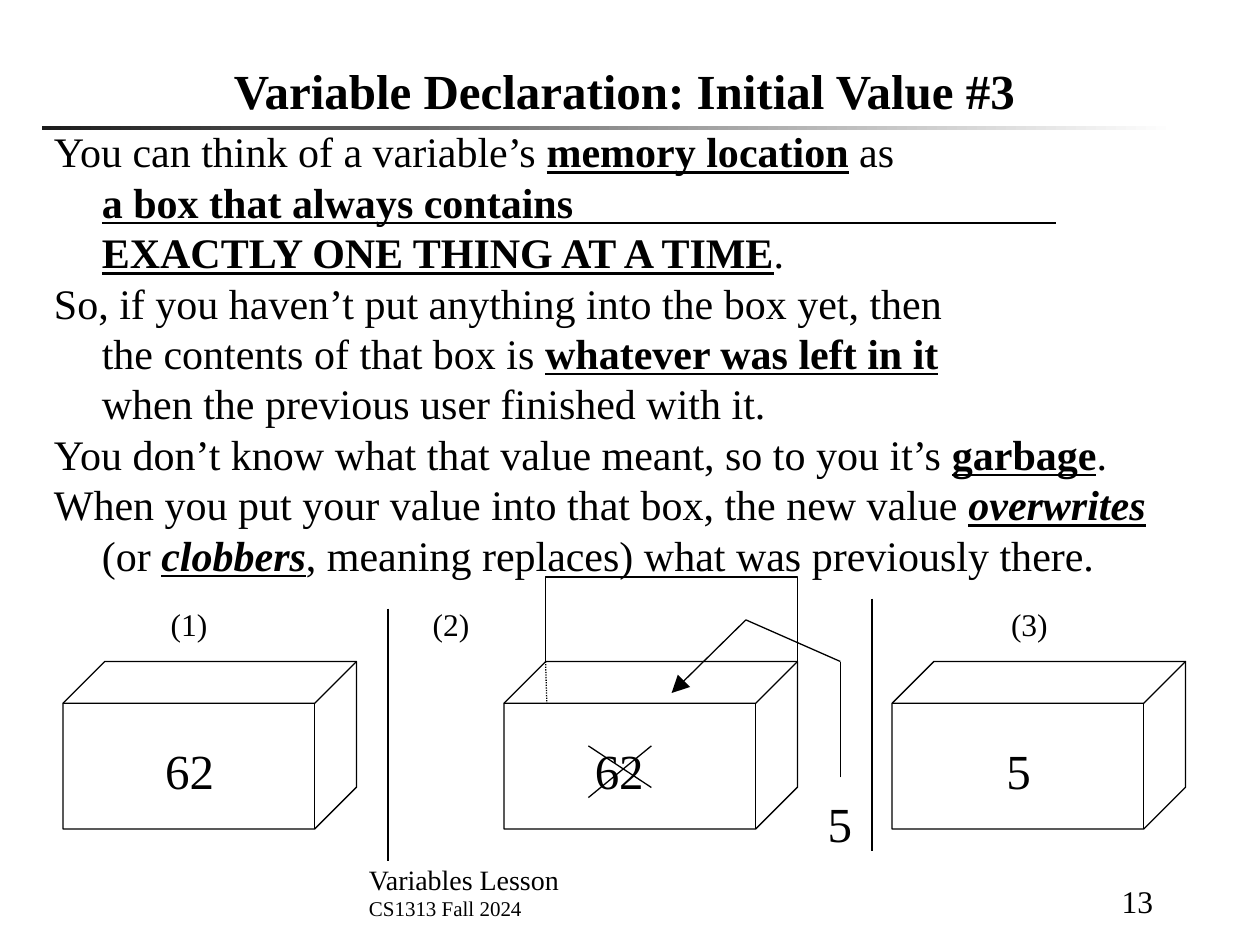
import pptx
import pptx.util
import pptx.dml.color
import pptx.enum.dml
import pptx.enum.shapes
import pptx.enum.text
from lxml import etree

Inches, Pt = pptx.util.Inches, pptx.util.Pt
RGB = pptx.dml.color.RGBColor.from_string
SHAPE = pptx.enum.shapes.MSO_SHAPE
ALIGN = pptx.enum.text.PP_ALIGN
ANCHOR = pptx.enum.text.MSO_ANCHOR
DASH = pptx.enum.dml.MSO_LINE
NS = "{http://schemas.openxmlformats.org/drawingml/2006/main}"


class Theme:
    font = "Times New Roman"
    ink, dark, light = RGB("000000"), RGB("1C1C1C"), RGB("FFFFFF")
    title, body, value, label, foot, small = 28, 24, 28, 18, 16, 12
    line, under = 0.75, 1.25


KEY = {"bold": True, "underline": True}
TERM = {**KEY, "italic": True}


class Page:
    def __init__(self, slide, theme):
        self.slide, self.theme = slide, theme

    def text(self, area, paras, size, align=ALIGN.LEFT, anchor=ANCHOR.TOP, wrap=True):
        """Each paragraph is a list of (text, format) runs; a newline breaks a line."""
        box = self.slide.shapes.add_textbox(*map(Inches, area))
        frame = box.text_frame
        frame.word_wrap, frame.vertical_anchor = wrap, anchor
        for n, runs in enumerate(paras):
            para = frame.paragraphs[0] if n == 0 else frame.add_paragraph()
            para.alignment = align
            for words, extra in runs:
                for k, part in enumerate(words.split("\n")):
                    if k:
                        para.add_line_break()
                    if part:
                        self.run(para, part, {"size": Pt(size), **extra})
        return frame

    def run(self, para, words, style):
        run = para.add_run()
        run.text = words
        for name, value in {"name": self.theme.font, **style}.items():
            setattr(run.font, name, value)
        run.font.color.rgb = self.theme.ink

    def hang(self, frame, indent):
        for para in frame.paragraphs:
            props = para._p.get_or_add_pPr()
            props.set("marL", str(Inches(indent)))
            props.set("indent", str(-Inches(indent)))

    def mark(self, x, y, words, size):
        high = 0.57 if size == self.theme.value else 0.4
        wide = 0.67 if size == self.theme.value else 0.5
        self.text((x, y, wide, high), [[(words, {})]], size, ALIGN.CENTER, wrap=False)

    def shape(self, kind, area):
        shape = self.slide.shapes.add_shape(kind, *map(Inches, area))
        shape.shadow.inherit = False
        shape.fill.background()
        shape.line.color.rgb = self.theme.ink
        shape.line.width = Pt(self.theme.line)
        return shape

    def cube(self, x):
        self.shape(SHAPE.CUBE, (x, 5.25, 2.33, 1.33)).adjustments[0] = 0.25

    def rule(self, area):
        bar = self.shape(SHAPE.RECTANGLE, area)
        bar.line.fill.background()
        bar.fill.gradient()
        bar.fill.gradient_angle = 0
        for stop, color in zip(bar.fill.gradient_stops, (self.theme.dark, self.theme.light)):
            stop.color.rgb = color

    def line(self, start, end, dash=None, arrow=False, width=Theme.line):
        kind = pptx.enum.shapes.MSO_CONNECTOR.STRAIGHT
        line = self.slide.shapes.add_connector(kind, *map(Inches, start + end))
        line.line.color.rgb = self.theme.ink
        line.line.width = Pt(width)
        if dash:
            line.line.dash_style = dash
        if arrow:
            etree.SubElement(line.line._get_or_add_ln(), NS + "tailEnd",
                             type="triangle", w="lg", len="lg")
        etree.SubElement(line._element.spPr, NS + "effectLst")


BODY = [
    [("You can think of a variable’s ", {}), ("memory location", KEY), (" as\n", {}),
     ("a box that always contains\nEXACTLY ONE THING AT A TIME", KEY), (".", {})],
    [("So, if you haven’t put anything into the box yet, then\n"
      "the contents of that box is ", {}), ("whatever was left in it", KEY),
     ("\nwhen the previous user finished with it.", {})],
    [("You don’t know what that value meant, so to you it’s ", {}),
     ("garbage", KEY), (".", {})],
    [("When you put your value into that box, the new value ", {}),
     ("overwrites", TERM), (" (or ", {}), ("clobbers", TERM),
     (", meaning replaces) what was previously there.", {})],
]


def main():
    deck = pptx.Presentation()
    deck.slide_width, deck.slide_height = Inches(10), Inches(7.5)
    theme = Theme()
    page = Page(deck.slides.add_slide(deck.slide_layouts[6]), theme)

    # Rule and footer
    page.rule((0.33, 1, 9, 0.03))
    page.text((7.83, 6.85, 1.42, 0.5), [[("13", {})]], theme.label,
              ALIGN.RIGHT, ANCHOR.BOTTOM)
    page.text((2.83, 6.86, 4.83, 0.5),
              [[("Variables Lesson", {})],
               [("CS1313 Fall 2024", {"size": Pt(theme.small)})]],
              theme.foot, anchor=ANCHOR.BOTTOM)

    # Three boxes with their values and step labels
    for step, (cube, value, label, words) in enumerate(
            [(0.5, 1.17, 1.25, "62"), (4, 4.58, 3.33, "62"), (7.08, 7.75, 7.92, "5")], 1):
        page.cube(cube)
        page.mark(value, 5.83, words, theme.value)
        page.mark(label, 4.75, f"({step})", theme.label)

    # Open lid of the second box
    page.shape(SHAPE.RECTANGLE, (4.33, 4.58, 2, 0.67))
    page.line((4.33, 5.25), (4.34, 5.58), dash=DASH.ROUND_DOT)

    # New value going in
    page.mark(6.33, 6.25, "5", theme.value)
    route = [(6.67, 6.17), (6.67, 5.25), (5.92, 4.92), (5.33, 5.5)]
    for start, end in zip(route, route[1:]):
        page.line(start, end, arrow=end == route[-1])

    # Dividers between steps
    for x, y in [(6.92, 4.75), (3.08, 4.83)]:
        page.line((x, y), (x, y + 2))

    # Old value crossed out
    page.line((4.67, 5.92), (5.17, 6.25))
    page.line((4.67, 6.33), (5.17, 5.92))

    # Body, with the underline that runs on past its second line
    body = page.text((0.33, 0.95, 9.25, 5.75), BODY, theme.body)
    page.hang(body, 0.38)
    page.line((4.54, 1.77), (8.38, 1.77), width=theme.under)

    # Title
    page.text((0.58, 0.42, 8.75, 0.58),
              [[("Variable Declaration: Initial Value #3", {"bold": True})]],
              theme.title, ALIGN.CENTER, ANCHOR.BOTTOM)

    deck.save("out.pptx")


if __name__ == "__main__":
    main()
